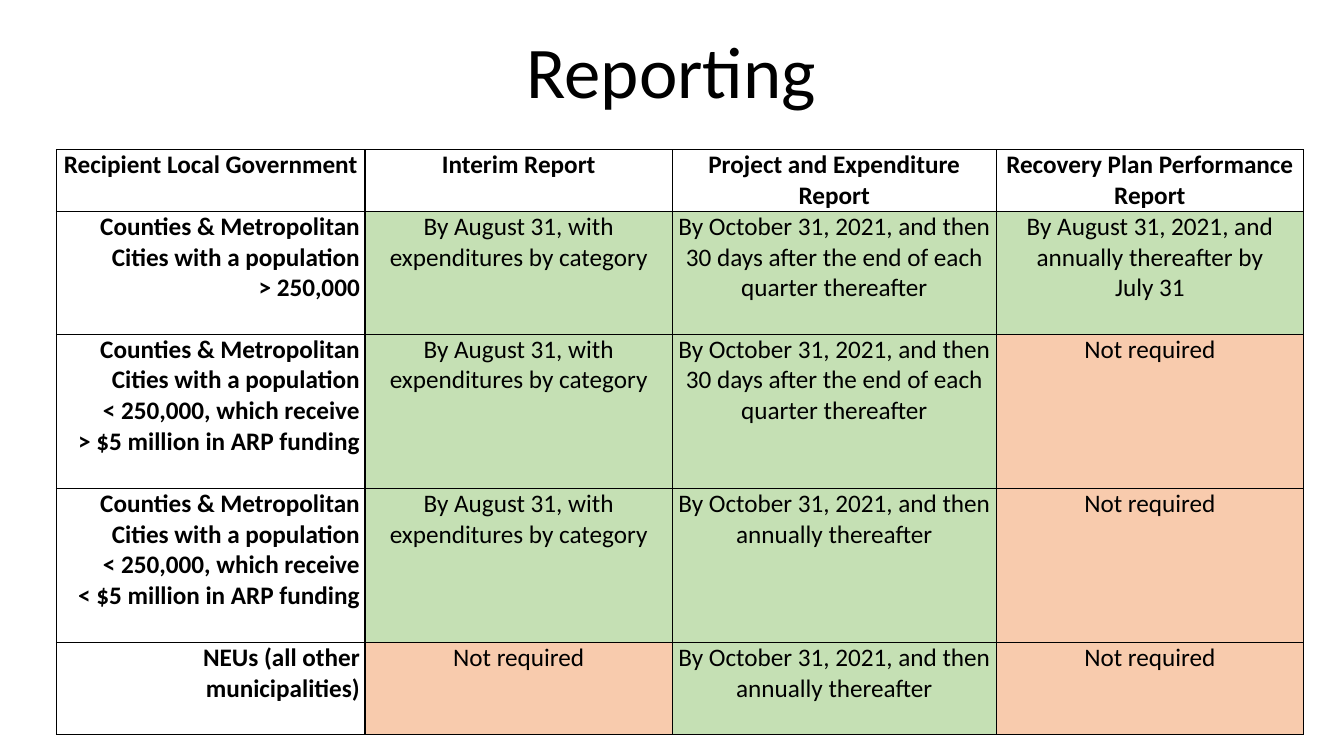
from lxml.etree import SubElement
from pptx import Presentation
from pptx.dml.color import RGBColor
from pptx.enum.text import MSO_ANCHOR, PP_ALIGN
from pptx.oxml.ns import qn
from pptx.util import Inches, Pt

BLACK = RGBColor(0x00, 0x00, 0x00)
GREEN = RGBColor(0xC5, 0xE0, 0xB4)
ORANGE = RGBColor(0xF8, 0xCB, 0xAD)

WIDTH, HEIGHT = Inches(13.33), Inches(7.5)
COLUMNS = [3.06, 3.05, 3.21, 3.05]
ROWS = [0.61, 1.22, 1.53, 1.53, 0.91]

NOT_REQUIRED = "Not required"
INTERIM = "By August 31, with expenditures by category"
QUARTERLY = ("By October 31, 2021, and then 30 days after the end of each "
             "quarter thereafter")
ANNUAL = "By October 31, 2021, and then annually thereafter"
RECOVERY = "By August 31, 2021, and annually thereafter by\vJuly 31"
LOCAL = "Counties & Metropolitan Cities with a population\v"
SMALLER = LOCAL + "< 250,000, which receive\v"

REPORTING = [
    ["Recipient Local Government", "Interim Report",
     "Project and Expenditure Report", "Recovery Plan Performance Report"],
    [LOCAL + "> 250,000", INTERIM, QUARTERLY, RECOVERY],
    [SMALLER + "> $5 million in ARP funding", INTERIM, QUARTERLY, NOT_REQUIRED],
    [SMALLER + "< $5 million in ARP funding", INTERIM, ANNUAL, NOT_REQUIRED],
    ["NEUs (all other municipalities)", NOT_REQUIRED, ANNUAL, NOT_REQUIRED],
]


class SlideBuilder:
    font = {"name": "Calibri", "size": Pt(18), "bold": False}
    margins = {"margin_left": Inches(0.05), "margin_right": Inches(0.05),
               "margin_top": 0, "margin_bottom": 0}

    def __init__(self, prs):
        self.slide = prs.slides.add_slide(prs.slide_layouts[5])

    def place(self, sp, x, y, w, h):
        """Set position and size from shares of the slide's size."""
        box = {"left": x * WIDTH, "top": y * HEIGHT,
               "width": w * WIDTH, "height": h * HEIGHT}
        for name, value in box.items():
            setattr(sp, name, int(value))

    def set_text(self, tf, text, align, **changes):
        tf.text = text
        p = tf.paragraphs[0]
        p.alignment = align
        for r in p.runs:
            for name, value in {**self.font, **changes}.items():
                setattr(r.font, name, value)
            r.font.color.rgb = BLACK
        return p

    def title(self, text):
        sp = self.slide.shapes.title
        self.place(sp, 0.068, 0.016, 0.863, 0.165)
        sp.text_frame.vertical_anchor = MSO_ANCHOR.MIDDLE
        p = self.set_text(sp.text_frame, text, PP_ALIGN.CENTER, size=Pt(52))
        p.line_spacing = 0.9

    def border(self, cell):
        tc_pr = cell._tc.get_or_add_tcPr()
        for side in ("lnL", "lnR", "lnT", "lnB"):
            ln = SubElement(tc_pr, qn(f"a:{side}"), w=str(Pt(1)))
            fill = SubElement(ln, qn("a:solidFill"))
            SubElement(fill, qn("a:srgbClr"), val=str(BLACK))

    def cell(self, cell, text, is_header, is_label):
        for name, value in self.margins.items():
            setattr(cell, name, value)
        align = PP_ALIGN.RIGHT if is_label and not is_header else PP_ALIGN.CENTER
        self.set_text(cell.text_frame, text, align, bold=is_header or is_label)
        self.border(cell)
        if is_header or is_label:
            cell.fill.background()
        else:
            cell.fill.solid()
            cell.fill.fore_color.rgb = ORANGE if text == NOT_REQUIRED else GREEN

    def table(self, rows, x, y):
        frame = self.slide.shapes.add_table(
            len(ROWS), len(COLUMNS), int(x * WIDTH), int(y * HEIGHT),
            Inches(sum(COLUMNS)), Inches(sum(ROWS)))
        table = frame.table
        table.first_row = table.horz_banding = False
        for column, width in zip(table.columns, COLUMNS):
            column.width = Inches(width)
        for i, (row, height) in enumerate(zip(table.rows, ROWS)):
            row.height = Inches(height)
            for j, text in enumerate(rows[i]):
                self.cell(table.cell(i, j), text, i == 0, j == 0)


def main():
    prs = Presentation()
    prs.slide_width, prs.slide_height = WIDTH, HEIGHT
    builder = SlideBuilder(prs)
    builder.title("Reporting")
    builder.table(REPORTING, 0.042, 0.198)
    prs.save("out.pptx")


if __name__ == "__main__":
    main()
